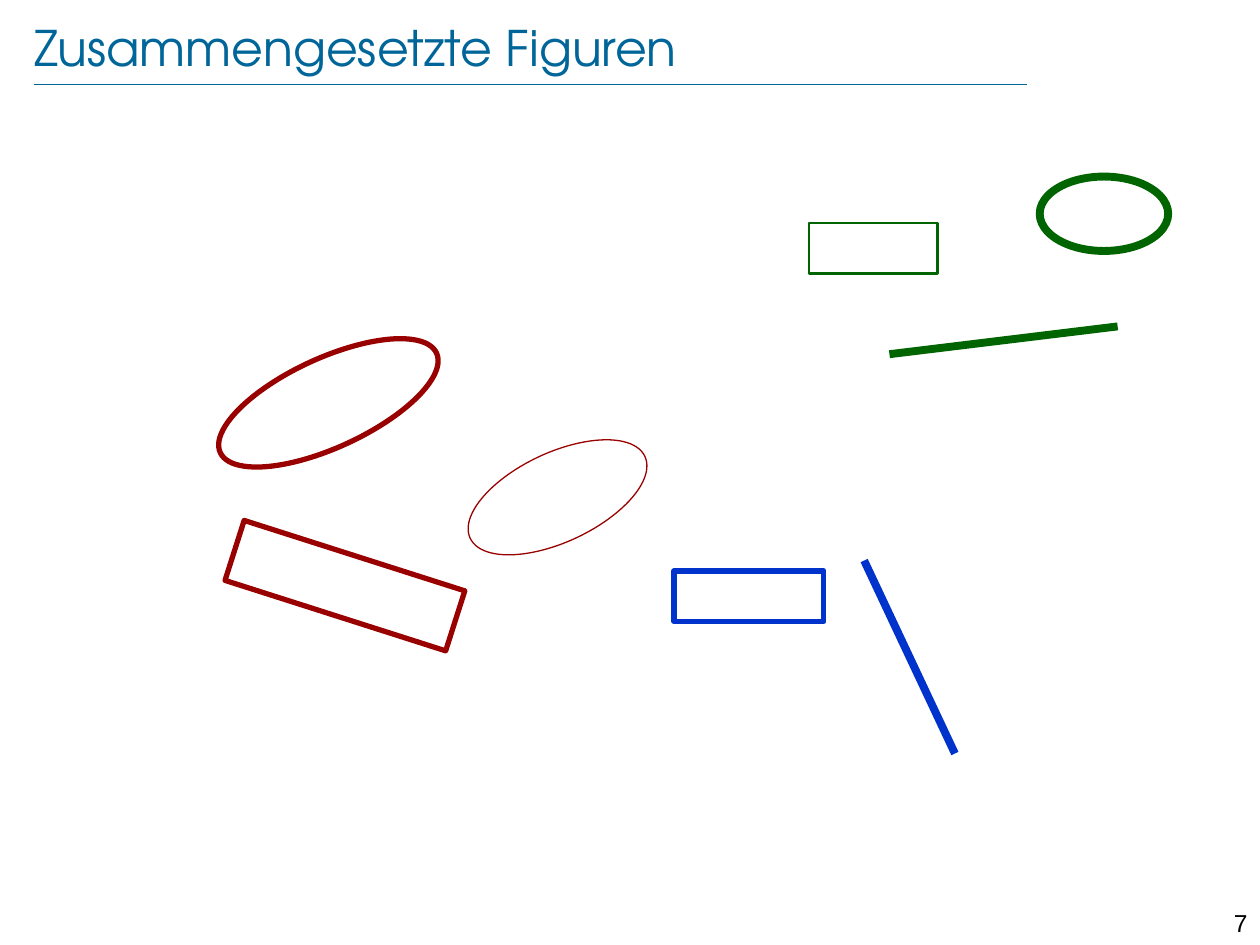
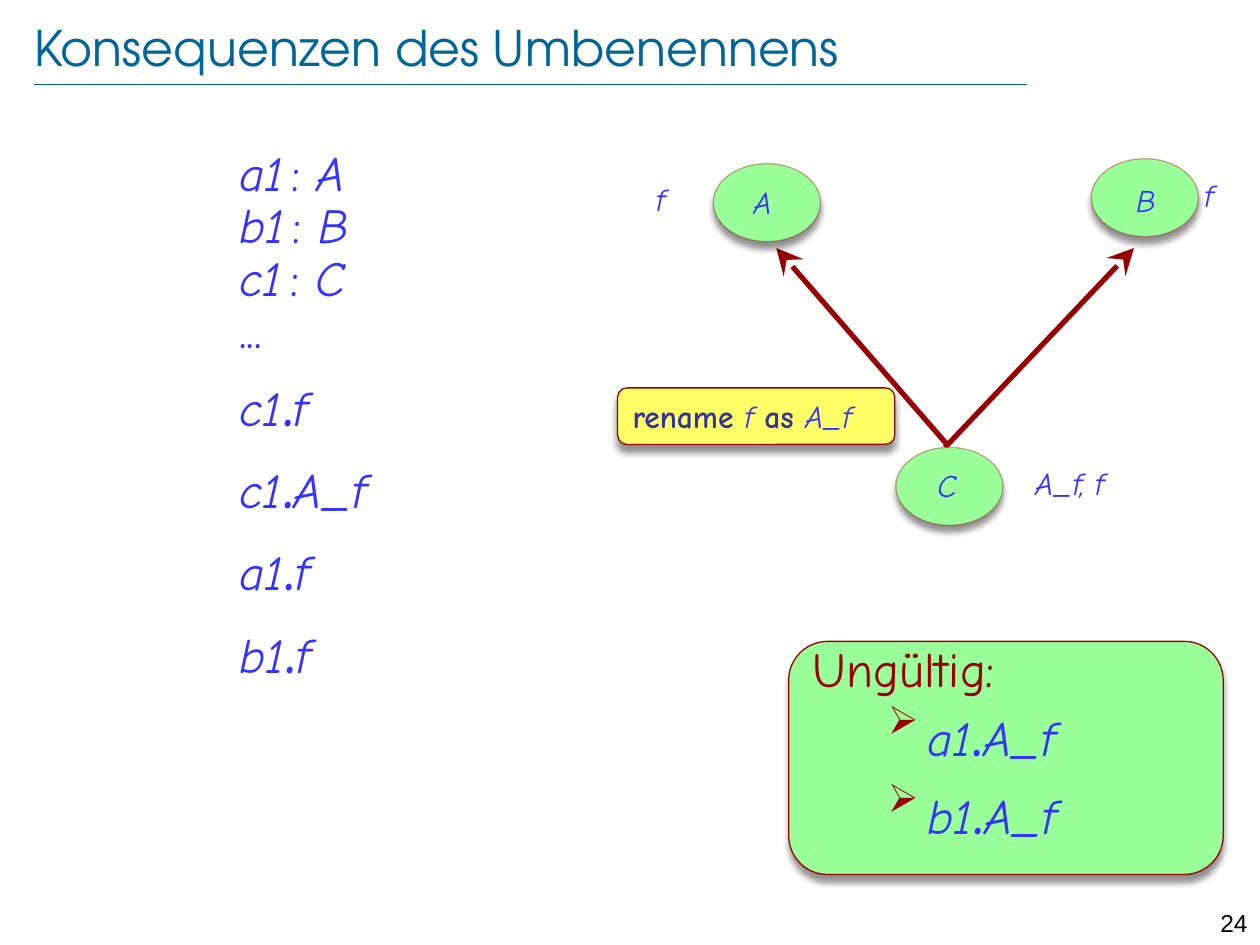
from lxml.etree import SubElement
from pptx import Presentation
from pptx.dml.color import RGBColor
from pptx.enum.shapes import MSO_CONNECTOR, MSO_SHAPE
from pptx.enum.text import MSO_ANCHOR, MSO_AUTO_SIZE, PP_ALIGN
from pptx.oxml.ns import qn
from pptx.util import Cm, Pt

TITLE_BLUE = RGBColor(0x00, 0x66, 0x99)
BLACK = RGBColor(0x00, 0x00, 0x00)
GREEN = RGBColor(0x00, 0x64, 0x00)
RED = RGBColor(0x99, 0x00, 0x00)
BLUE = RGBColor(0x00, 0x33, 0xCC)
CODE_BLUE = RGBColor(0x33, 0x33, 0xFF)
KEYWORD_BLUE = RGBColor(0x33, 0x33, 0x99)
LIGHT_GREEN = RGBColor(0x99, 0xFF, 0x99)
YELLOW = RGBColor(0xFF, 0xFF, 0x66)

TITLE_FONT = "TeX Gyre Adventor"
BODY_FONT = "Comic Neue"
NUMBER_FONT = "Arial"

ELLIPSE = MSO_SHAPE.OVAL
RECT = MSO_SHAPE.RECTANGLE
ROUND_RECT = MSO_SHAPE.ROUNDED_RECTANGLE
CLASS_W, CLASS_H = 2.16, 1.57


def child(parent, tag, **attrs):
    return SubElement(parent, qn(tag), {k: str(v) for k, v in attrs.items()})


def add_run(p, text, size=28, color=CODE_BLUE, italic=False, bold=False, font=BODY_FONT):
    r = p.add_run()
    r.text = text
    r.font.name = font
    r.font.size = Pt(size)
    r.font.color.rgb = color
    r.font.italic = italic
    r.font.bold = bold


def add_line(s, start, end, color, width, arrow=False):
    ends = [Cm(v) for v in (*start, *end)]
    c = s.shapes.add_connector(MSO_CONNECTOR.STRAIGHT, *ends)
    c.line.color.rgb = color
    c.line.width = Pt(width)
    if arrow:
        ln = c._element.spPr.find(qn("a:ln"))
        child(ln, "a:tailEnd", type="stealth", w="lg", len="lg")
    child(c._element.spPr, "a:effectLst")


def add_figure(s, kind, box, color, width, rotation=0, fill=None):
    sp = s.shapes.add_shape(kind, *[Cm(v) for v in box])
    sp.shadow.inherit = False
    sp.rotation = rotation
    sp.line.color.rgb = color
    sp.line.width = Pt(width)
    if fill is None:
        sp.fill.background()
    else:
        sp.fill.solid()
        sp.fill.fore_color.rgb = fill
    return sp


def add_raised(s, kind, box, fill):
    sp = add_figure(s, kind, box, RED, 0.75, fill=fill)
    effects = sp._element.spPr.find(qn("a:effectLst"))
    shadow = child(effects, "a:outerShdw", blurRad=int(Pt(4)), dist=int(Pt(4)),
                   dir=90 * 60000, algn="ctr", rotWithShape=0)
    child(child(shadow, "a:srgbClr", val="000000"), "a:alpha", val=43000)
    return sp


def add_text_box(s, box):
    tf = s.shapes.add_textbox(*[Cm(v) for v in box]).text_frame
    tf.word_wrap = True
    return tf


def add_label(s, text, box, align=PP_ALIGN.LEFT, spacing=1.0):
    p = add_text_box(s, box).paragraphs[0]
    p.alignment = align
    p.line_spacing = spacing
    add_run(p, text, 18, italic=True)


def add_class(s, name, left, top, label_box, align=PP_ALIGN.CENTER):
    sp = add_raised(s, ELLIPSE, (left, top, CLASS_W, CLASS_H), LIGHT_GREEN)
    line_color = sp._element.spPr.find(qn("a:ln")).find(".//" + qn("a:srgbClr"))
    child(line_color, "a:alpha", val=34000)
    add_label(s, name, label_box, align)


def add_paragraph(tf, first, spacing, before):
    p = tf.paragraphs[0] if first else tf.add_paragraph()
    p.alignment = PP_ALIGN.LEFT
    p.line_spacing = spacing
    p.space_before = Pt(0 if first else before)
    return p


def add_call(p, target, feature):
    add_run(p, target, italic=True)
    add_run(p, ".", 44)
    add_run(p, feature, italic=True)


def add_arrow_bullet(p):
    pPr = p._p.get_or_add_pPr()
    pPr.set("marL", str(int(Cm(2.31))))
    pPr.set("indent", str(int(Cm(-0.79))))
    child(child(pPr, "a:buClr"), "a:srgbClr", val=str(RED))
    child(pPr, "a:buSzPct", val=80000)
    child(pPr, "a:buChar", char="➢")


def add_slide(prs, title, number):
    s = prs.slides.add_slide(prs.slide_layouts[5])
    add_line(s, (0.69, 1.7), (20.7, 1.7), TITLE_BLUE, 0.25)
    p = add_text_box(s, (24, 18.19, 1.4, 0.61)).paragraphs[0]
    p.alignment = PP_ALIGN.RIGHT
    add_run(p, number, 14, BLACK, font=NUMBER_FONT)

    sp = s.shapes.title
    sp.left, sp.top, sp.width, sp.height = Cm(0.69), Cm(0.33), Cm(22.07), Cm(1.22)
    tf = sp.text_frame
    tf.auto_size = MSO_AUTO_SIZE.NONE
    tf.vertical_anchor = MSO_ANCHOR.MIDDLE
    tf.margin_left = tf.margin_right = tf.margin_top = tf.margin_bottom = 0
    p = tf.paragraphs[0]
    p.alignment = PP_ALIGN.LEFT
    add_run(p, title, 28, TITLE_BLUE, font=TITLE_FONT)
    return s


def add_declarations(s):
    tf = add_text_box(s, (4.57, 3.07, 6.5, 11.07))
    for i, (entity, kind) in enumerate((("a1", "A"), ("b1", "B"), ("c1", "C"))):
        p = add_paragraph(tf, i == 0, 0.7, 6.4)
        add_run(p, entity, italic=True)
        add_run(p, " ", 14, italic=True)
        add_run(p, ": ")
        add_run(p, kind, italic=True)
    add_run(add_paragraph(tf, False, 0.7, 6.4), "...")
    for target, feature in (("c1", "f"), ("c1", "A_f"), ("a1", "f"), ("b1", "f")):
        add_call(add_paragraph(tf, False, 0.7, 10.1), target, feature)


def add_rename_clause(s):
    sp = add_raised(s, ROUND_RECT, (12.45, 7.82, 5.59, 1.14), YELLOW)
    tf = sp.text_frame
    tf.vertical_anchor = MSO_ANCHOR.MIDDLE
    p = add_paragraph(tf, True, 1.0, 0)
    for keyword, name in (("rename ", "f "), ("as ", "A_f")):
        add_run(p, keyword, 18, KEYWORD_BLUE, bold=True)
        add_run(p, name, 18, italic=True)


def add_invalid_calls(s):
    sp = add_raised(s, ROUND_RECT, (15.9, 12.93, 8.76, 4.7), LIGHT_GREEN)
    tf = sp.text_frame
    tf.vertical_anchor = MSO_ANCHOR.TOP
    add_run(add_paragraph(tf, True, 0.6, 0), "Ungültig:", color=RED)
    for target in ("a1", "b1"):
        p = add_paragraph(tf, False, 0.8, 2)
        p.level = 1
        add_arrow_bullet(p)
        add_call(p, target, "A_f")


def build_figures(prs):
    s = add_slide(prs, "Zusammengesetzte Figuren", "7")
    add_figure(s, ELLIPSE, (20.96, 3.56, 2.59, 1.5), GREEN, 4.5)
    add_figure(s, RECT, (16.31, 4.5, 2.59, 1.02), GREEN, 1.5)
    add_line(s, (17.93, 7.14), (22.53, 6.58), GREEN, 4.5)
    add_figure(s, ELLIPSE, (10.34, 8.08, 1.8, 3.89), RED, 0.75, 244.9)
    add_figure(s, ELLIPSE, (5.72, 5.72, 1.8, 4.8), RED, 3, 245.3)
    add_figure(s, RECT, (6.32, 9.47, 1.27, 4.67), RED, 3, 287.7)
    add_figure(s, RECT, (13.59, 11.51, 3.02, 1.02), BLUE, 3)
    add_line(s, (17.42, 11.3), (19.25, 15.19), BLUE, 4.5)


def build_renaming(prs):
    s = add_slide(prs, "Konsequenzen des Umbenennens", "24")
    add_declarations(s)
    add_line(s, (19.05, 9.02), (22.86, 5), RED, 3, arrow=True)
    add_line(s, (19.1, 8.97), (15.65, 5), RED, 3, arrow=True)
    add_rename_clause(s)
    add_class(s, "C", 18.06, 9.02, (17.07, 9.27, 4.04, 1.02))
    add_class(s, "B", 22, 3.2, (21.64, 3.53, 2.92, 1.02))
    add_class(s, "A", 14.38, 3.3, (14.94, 3.56, 2.77, 1.02), PP_ALIGN.LEFT)
    add_label(s, "f", (12.98, 3.84, 2.03, 0.71), spacing=0.5)
    add_label(s, "f", (24.03, 3.76, 1.3, 0.71), spacing=0.5)
    add_label(s, "A_f, f", (20.62, 9.55, 3.12, 0.71), spacing=0.5)
    add_invalid_calls(s)


def main():
    prs = Presentation()
    prs.slide_width, prs.slide_height = Cm(25.4), Cm(19.05)
    build_figures(prs)
    build_renaming(prs)
    prs.save("out.pptx")


if __name__ == "__main__":
    main()
